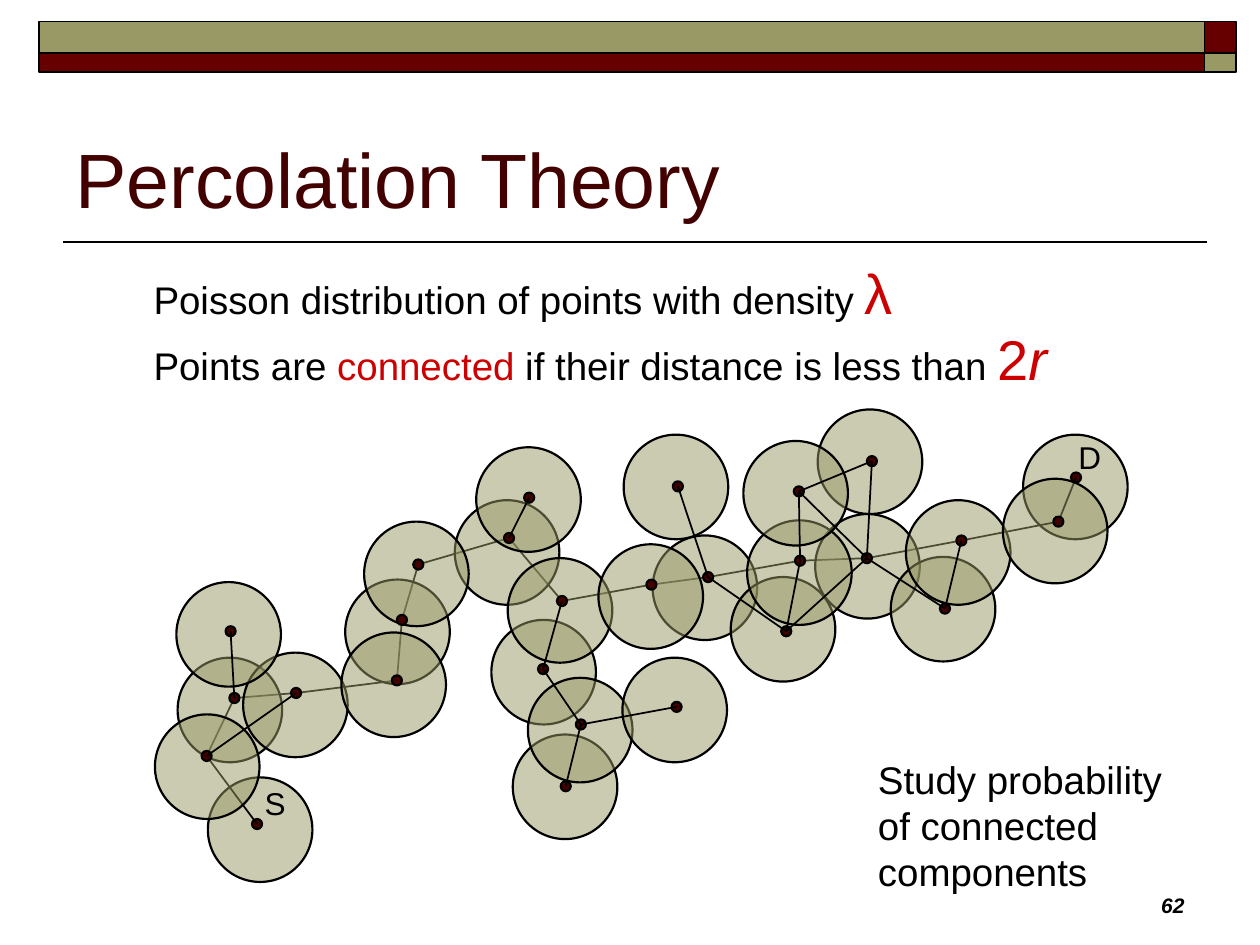
"""Build the percolation theory slide with its network of overlapping discs."""
import itertools
from typing import NamedTuple

import pptx
import pptx.dml.color
import pptx.enum.shapes
import pptx.enum.text
import pptx.oxml
import pptx.oxml.ns
import pptx.util

COLS, ROWS = 1000, 750
CELL = pptx.util.Inches(10) // COLS
DISC, DOT = 83, 8
BLACK, WHITE, OLIVE, MAROON, DARK, RED = (
    "000000", "FFFFFF", "999966", "660000", "420000", "CC0000")
ALIGN = pptx.enum.text.PP_ALIGN
ANCHOR = pptx.enum.text.MSO_ANCHOR
SHAPE = pptx.enum.shapes.MSO_SHAPE


class Box(NamedTuple):
    """A rectangle in grid columns and rows."""
    col: float
    row: float
    cols: float
    rows: float


class Run(NamedTuple):
    """A piece of text in one style."""
    text: str
    size: int = 22
    color: str = BLACK
    bold: bool = False
    italic: bool = False


class Label(NamedTuple):
    """A text box holding one paragraph."""
    box: Box
    runs: list[Run]
    align: ALIGN = ALIGN.LEFT
    anchor: ANCHOR = ANCHOR.TOP
    wrap: bool = True
    grow: bool = True


class Node(NamedTuple):
    """A point of the network: corner of its disc and corner of its dot."""
    disc: tuple[int, int]
    dot: tuple[int, int]

    def center(self) -> tuple[float, float]:
        """Return the middle of the dot."""
        return self.dot[0] + DOT / 2, self.dot[1] + DOT / 2


NODES = {
    "w": Node((649, 325), (688, 362)),
    "D": Node((812, 345), (850, 375)),
    "S": Node((165, 617), (200, 650)),
    "c": Node((141, 522), (182, 550)),
    "i": Node((361, 397), (400, 423)),
    "v": Node((647, 408), (684, 439)),
    "y": Node((707, 442), (746, 479)),
    "x": Node((719, 397), (759, 425)),
    "z": Node((796, 380), (836, 410)),
    "q": Node((518, 425), (558, 454)),
    "u": Node((580, 458), (620, 497)),
    "s": Node((593, 413), (631, 441)),
    "t": Node((590, 350), (630, 386)),
    "l": Node((390, 492), (427, 527)),
    "k": Node((403, 443), (442, 473)),
    "p": Node((475, 432), (513, 460)),
    "r": Node((495, 345), (534, 382)),
    "g": Node((274, 460), (315, 488)),
    "h": Node((289, 414), (328, 444)),
    "j": Node((378, 355), (416, 391)),
    "e": Node((193, 518), (231, 546)),
    "f": Node((271, 502), (311, 536)),
    "d": Node((140, 462), (179, 497)),
    "b": Node((123, 567), (160, 596)),
    "n": Node((407, 583), (445, 620)),
    "m": Node((419, 538), (457, 571)),
    "o": Node((494, 522), (533, 557)),
}
ENDS = ("w", "D", "S")
ROUTE = "SbcefghikpqsvxzD"
BRANCHES = "dc lk ij lm mo mn qr su st vw tw tv vy yx uv uq be".split()

LABELS = [
    Label(Box(50, 58, 900, 125), [Run("Percolation Theory", 44, DARK)],
          anchor=ANCHOR.BOTTOM, grow=False),
    Label(Box(717, 683, 233, 50), [Run("62", 12, BLACK, True, True)],
          ALIGN.RIGHT, ANCHOR.BOTTOM, grow=False),
    Label(Box(112, 200, 838, 63),
          [Run("Poisson distribution of points with density "), Run("λ", 32, RED)]),
    Label(Box(112, 253, 731, 63),
          [Run("Points are "), Run("connected ", color=RED),
           Run("if their distance is less than "), Run("2", 32, RED),
           Run("r", 32, RED, italic=True)], wrap=False),
    Label(Box(687, 595, 296, 120),
          [Run("Study probability\vof connected components")]),
]
END_LABELS = [
    Label(Box(200, 617, 37, 40), [Run("S", 18)], ALIGN.CENTER, wrap=False),
    Label(Box(846, 343, 38, 40), [Run("D", 18)], ALIGN.CENTER, wrap=False),
]


def rgb(color: str) -> pptx.dml.color.RGBColor:
    """Turn a hex string into a colour."""
    return pptx.dml.color.RGBColor.from_string(color)


def cells(*counts: float) -> list[int]:
    """Turn grid counts into lengths."""
    return [round(n * CELL) for n in counts]


def add_block(s, kind: SHAPE, box: Box, fill: str, width: float, alpha: int = 100) -> None:
    """Draw a filled shape with a black outline."""
    sp = s.shapes.add_shape(kind, *cells(*box))
    sp.shadow.inherit = False
    sp.fill.solid()
    sp.fill.fore_color.rgb = rgb(fill)
    sp.line.color.rgb = rgb(BLACK)
    sp.line.width = pptx.util.Pt(width)
    if alpha < 100:
        clr = sp.fill._xPr.find(".//" + pptx.oxml.ns.qn("a:srgbClr"))
        pptx.oxml.ns.qn("a:alpha")
        clr.append(pptx.oxml.parse_xml(
            f'<a:alpha {pptx.oxml.ns.nsdecls("a")} val="{alpha * 1000}"/>'))


def add_line(s, start: tuple[float, float], end: tuple[float, float]) -> None:
    """Draw a thin black line."""
    cx = s.shapes.add_connector(
        pptx.enum.shapes.MSO_CONNECTOR.STRAIGHT, *cells(*start, *end))
    cx.line.color.rgb = rgb(BLACK)
    cx.line.width = pptx.util.Pt(1)
    cx._element.spPr.append(pptx.oxml.parse_xml(
        f'<a:effectLst {pptx.oxml.ns.nsdecls("a")}/>'))


def add_label(s, label: Label) -> None:
    """Write a text box run by run."""
    tf = s.shapes.add_textbox(*cells(*label.box)).text_frame
    tf.word_wrap = label.wrap
    tf.vertical_anchor = label.anchor
    if label.grow:
        tf.auto_size = pptx.enum.text.MSO_AUTO_SIZE.SHAPE_TO_FIT_TEXT
    p = tf.paragraphs[0]
    p.alignment = label.align
    for run in label.runs:
        for n, text in enumerate(run.text.split("\v")):
            if n:
                p.add_line_break()
            r = p.add_run()
            r.text = text
            r.font.name = "Arial"
            r.font.size = pptx.util.Pt(run.size)
            r.font.bold = run.bold
            r.font.italic = run.italic
            r.font.color.rgb = rgb(run.color)


def add_header(s) -> None:
    """Draw the checkered band and the rule under the title."""
    add_line(s, (958, 192), (50, 192))
    columns, rows = [(31, 925), (956, 25)], [(17, 25), (42, 15)]
    for (i, (col, w)), (j, (row, h)) in itertools.product(enumerate(columns), enumerate(rows)):
        add_block(s, SHAPE.RECTANGLE, Box(col, row, w, h), (OLIVE, MAROON)[(i + j) % 2], 1)


def add_nodes(s, nodes: list[Node]) -> None:
    """Draw the discs, then the dots above them."""
    for node in nodes:
        add_block(s, SHAPE.OVAL, Box(*node.disc, DISC, DISC), OLIVE, 1.25, 50)
    for node in nodes:
        add_block(s, SHAPE.OVAL, Box(*node.dot, DOT, DOT), DARK, 1.25)


def add_edges(s, pairs) -> None:
    """Join each pair of nodes from dot to dot."""
    for a, b in pairs:
        add_line(s, NODES[a].center(), NODES[b].center())


def main() -> None:
    """Build and save the slide."""
    prs = pptx.Presentation()
    prs.slide_width, prs.slide_height = cells(COLS, ROWS)
    s = prs.slides.add_slide(prs.slide_layouts[6])
    s.background.fill.solid()
    s.background.fill.fore_color.rgb = rgb(WHITE)
    add_header(s)
    for label in LABELS:
        add_label(s, label)
    add_nodes(s, [NODES[name] for name in ENDS])
    for label in END_LABELS:
        add_label(s, label)
    add_edges(s, itertools.pairwise(ROUTE))
    add_nodes(s, [node for name, node in NODES.items() if name not in ENDS])
    add_edges(s, BRANCHES)
    prs.save("out.pptx")


if __name__ == "__main__":
    main()
